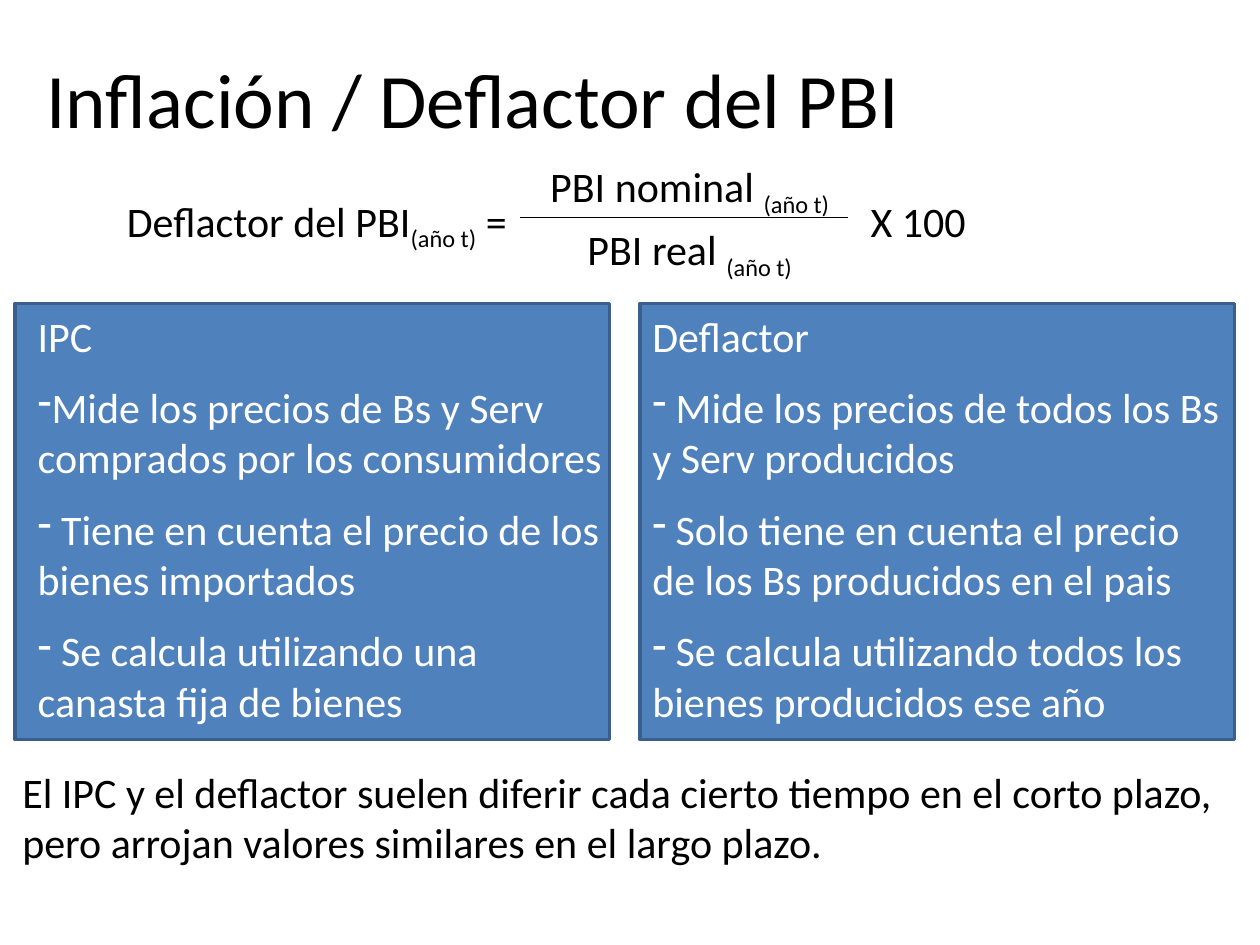
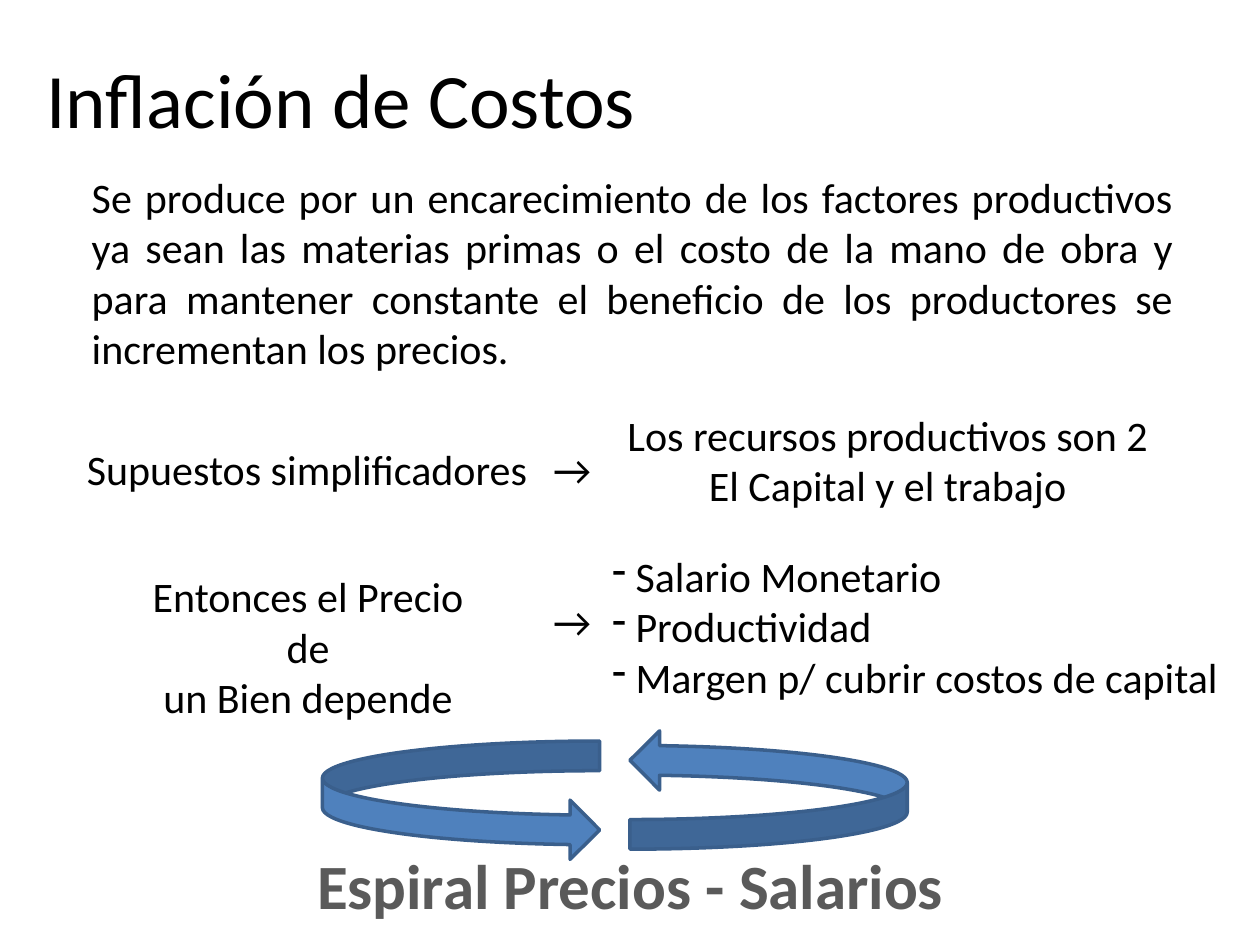
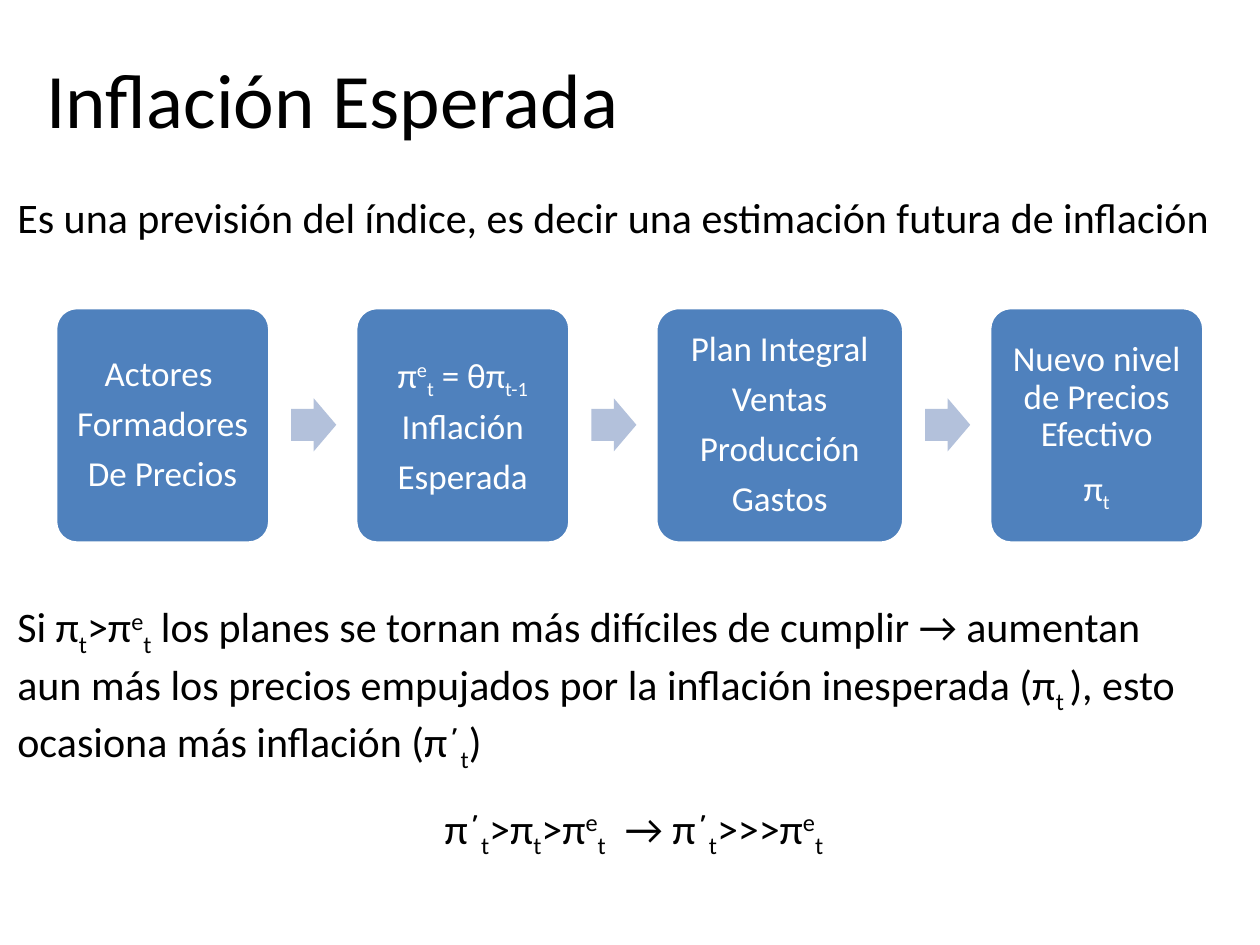
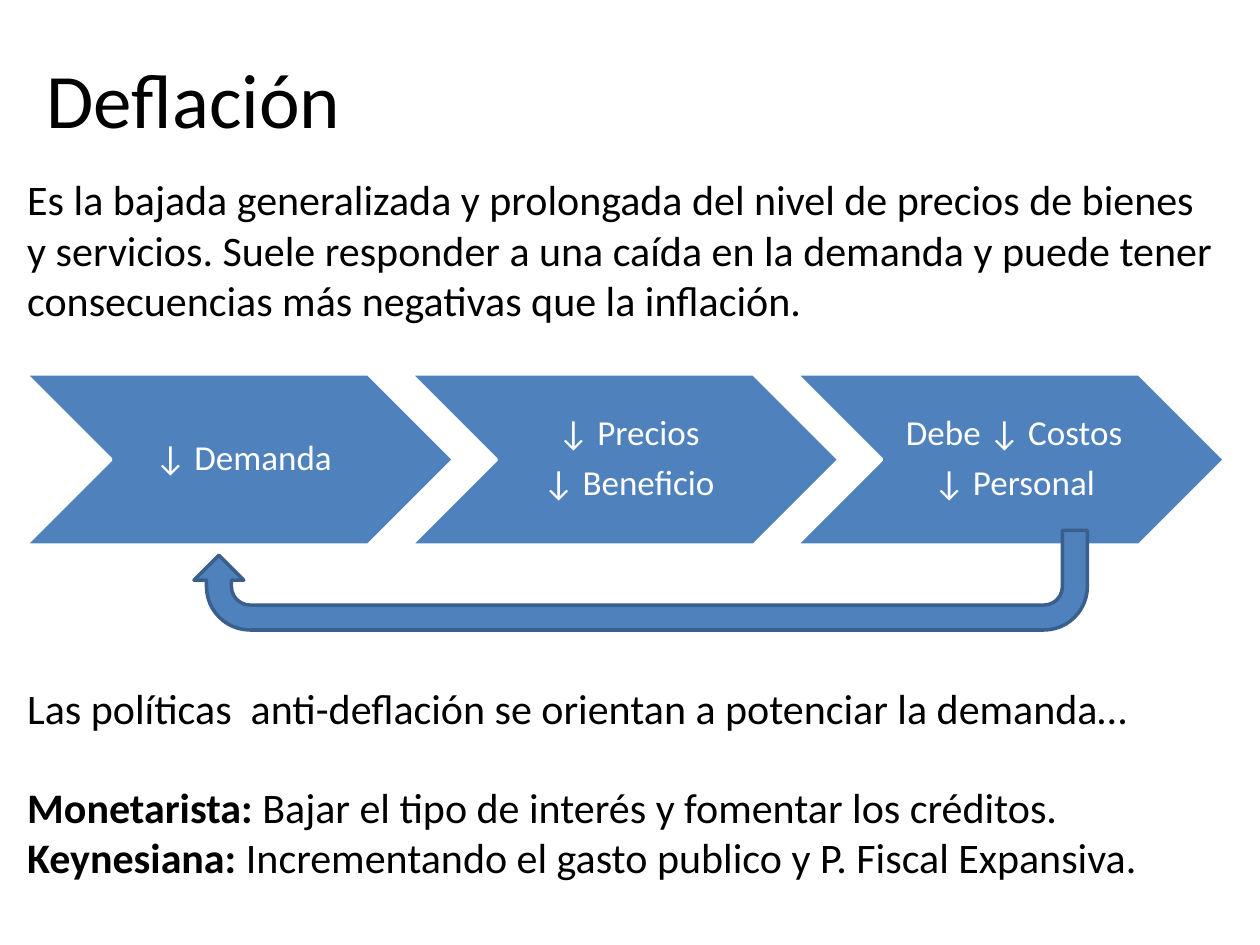
"""Builds four slides on inflation, the GDP deflator and deflation."""
from dataclasses import dataclass

from lxml import etree
from pptx import Presentation
from pptx.dml.color import RGBColor
from pptx.enum.shapes import MSO_CONNECTOR, MSO_SHAPE
from pptx.enum.text import MSO_ANCHOR, PP_ALIGN
from pptx.oxml.ns import qn
from pptx.util import Cm, Pt

LEFT, CENTER, JUSTIFY = PP_ALIGN.LEFT, PP_ALIGN.CENTER, PP_ALIGN.JUSTIFY
TOP, MIDDLE = MSO_ANCHOR.TOP, MSO_ANCHOR.MIDDLE
RECTANGLE, ROUNDED = MSO_SHAPE.RECTANGLE, MSO_SHAPE.ROUNDED_RECTANGLE
CHEVRON, RIGHT_ARROW = MSO_SHAPE.CHEVRON, MSO_SHAPE.RIGHT_ARROW
CURVED_RIGHT, CURVED_LEFT = MSO_SHAPE.CURVED_RIGHT_ARROW, MSO_SHAPE.CURVED_LEFT_ARROW
U_TURN = MSO_SHAPE.U_TURN_ARROW
STRAIGHT = MSO_CONNECTOR.STRAIGHT
BASELINES = {"_": "-25000", "^": "30000"}


@dataclass(frozen=True)
class Theme:
    """Colours, font and type sizes of the deck."""
    font: str = "Calibri"
    ink: RGBColor = RGBColor(0x00, 0x00, 0x00)
    paper: RGBColor = RGBColor(0xFF, 0xFF, 0xFF)
    blue: RGBColor = RGBColor(0x4F, 0x81, 0xBD)
    edge: RGBColor = RGBColor(0x3A, 0x5F, 0x8C)
    pale: RGBColor = RGBColor(0xB3, 0xC1, 0xDB)
    grey: RGBColor = RGBColor(0x5A, 0x5A, 0x5A)
    title: int = 44
    banner: int = 36
    body: int = 24
    step: int = 20


class Deck:
    """Holds the style and the current slide."""

    def __init__(self, theme):
        self.theme = theme
        self.presentation = Presentation()
        self.presentation.slide_width = Cm(25.4)
        self.presentation.slide_height = Cm(19.05)

    def new_slide(self, title):
        """Start a blank slide with its title."""
        blank = self.presentation.slide_layouts[6]
        self.slide = self.presentation.slides.add_slide(blank)
        self.text(0.69, 0.91, 24.21, 2.13, [title], size=self.theme.title)

    def set_lines(self, frame, lines, size, color, align=LEFT, bold=False,
                  before=0, after=0, spacing=1.0):
        """Fill a frame; '|' parts runs, led by _ (sub), ^ (super) or * (bold); '-' leads a bullet."""
        frame.word_wrap = True
        for index, line in enumerate(lines):
            paragraph = frame.paragraphs[0] if index == 0 else frame.add_paragraph()
            paragraph.alignment = align
            paragraph.line_spacing = spacing
            paragraph.space_before = Pt(before if index else 0)
            paragraph.space_after = Pt(after)
            if line.startswith("-"):
                self.dash(paragraph)
                line = line[1:]
            font = paragraph.font
            font.name, font.size, font.bold = self.theme.font, Pt(size), bold
            font.color.rgb = color
            for part in line.split("|"):
                run = paragraph.add_run()
                run.text = part.lstrip("_^*")
                if part[0] in BASELINES:
                    run.font._element.set("baseline", BASELINES[part[0]])
                elif part[0] == "*":
                    run.font.bold = True

    def dash(self, paragraph):
        """Give a paragraph a dash bullet without indent."""
        properties = paragraph._p.get_or_add_pPr()
        properties.set("marL", "0")
        properties.set("indent", "0")
        etree.SubElement(properties, qn("a:buFontTx"))
        etree.SubElement(properties, qn("a:buChar")).set("char", "-")

    def text(self, left, top, width, height, lines, size=None, color=None, **style):
        """Add a text box."""
        box = self.slide.shapes.add_textbox(Cm(left), Cm(top), Cm(width), Cm(height))
        self.set_lines(box.text_frame, lines, size or self.theme.body,
                       color or self.theme.ink, **style)

    def shape(self, kind, left, top, width, height, fill=None, edge=None):
        """Add a filled preset shape."""
        shape = self.slide.shapes.add_shape(kind, Cm(left), Cm(top), Cm(width), Cm(height))
        shape.shadow.inherit = False
        shape.fill.solid()
        shape.fill.fore_color.rgb = fill or self.theme.blue
        shape.line.color.rgb = edge or self.theme.edge
        shape.line.width = Pt(2)
        return shape

    def inset(self, shape, left, top, right, bottom, anchor):
        """Set the margins and anchor of a shape's text."""
        frame = shape.text_frame
        frame.margin_left, frame.margin_top = Cm(left), Cm(top)
        frame.margin_right, frame.margin_bottom = Cm(right), Cm(bottom)
        frame.vertical_anchor = anchor
        return frame

    def panel(self, left, lines, margins):
        """Add a comparison panel."""
        panel = self.shape(RECTANGLE, left, 6.12, 11.99, 8.79)
        frame = self.inset(panel, margins[0], 0.13, margins[1], 0.13, TOP)
        self.set_lines(frame, lines, self.theme.body, self.theme.paper, before=12)

    def step(self, kind, left, top, width, height, lines, margins):
        """Add one step of a process."""
        step = self.shape(kind, left, top, width, height, edge=self.theme.paper)
        if kind == ROUNDED:
            step.adjustments[0] = 0.1
        frame = self.inset(step, *margins, MIDDLE)
        self.set_lines(frame, lines, self.theme.step, self.theme.paper,
                       align=CENTER, after=7, spacing=0.9)

    def step_arrow(self, left, top):
        """Add a small arrow between two steps."""
        arrow = self.shape(RIGHT_ARROW, left, top, 0.91, 1.07, fill=self.theme.pale)
        arrow.adjustments[0] = 0.6
        arrow.line.fill.background()

    def rule(self, left, right, y):
        """Add a thin horizontal line."""
        rule = self.slide.shapes.add_connector(STRAIGHT, Cm(left), Cm(y), Cm(right), Cm(y))
        rule.line.color.rgb = self.theme.ink
        rule.line.width = Pt(0.75)
        etree.SubElement(rule._element.spPr, qn("a:effectLst"))


def deflator_slide(deck):
    """Formula of the deflator and its comparison with the IPC."""
    deck.new_slide("Inflación / Deflactor del PBI")
    deck.text(2.31, 3.81, 8.41, 1.27, ["Deflactor del PBI|_(año t)| ="])
    for top, term in ((3.12, "PBI nominal |_(año t)"), (4.39, "PBI real |_(año t)")):
        deck.text(10.31, top, 7.19, 1.27, [term], align=CENTER)
    deck.rule(10.49, 17.09, 4.39)
    deck.text(17.3, 3.81, 3.4, 1.27, ["X 100"])
    deck.panel(0.3, [
        "IPC",
        "-Mide los precios de Bs y Serv comprados por los consumidores",
        "- Tiene en cuenta el precio de los bienes importados",
        "- Se calcula utilizando una canasta fija de bienes",
    ], (0.46, 0.05))
    deck.panel(12.9, [
        "Deflactor",
        "- Mide los precios de todos los Bs y Serv producidos",
        "- Solo tiene en cuenta el precio de los Bs producidos en el pais",
        "- Se calcula utilizando todos los bienes producidos ese año",
    ], (0.25, 0.25))
    deck.text(0.2, 15.32, 24.89, 2.31, [
        "El IPC y el deflactor suelen diferir cada cierto tiempo en el corto plazo, "
        "pero arrojan valores similares en el largo plazo."])


def costs_slide(deck):
    """Cost inflation and the price-wage spiral."""
    deck.new_slide("Inflación de Costos")
    deck.text(1.6, 3.33, 22.3, 4.37, [
        "Se produce por un encarecimiento de los factores productivos ya sean las "
        "materias primas o el costo de la mano de obra y para mantener constante el "
        "beneficio de los productores se incrementan los precios."], align=JUSTIFY)
    deck.text(1.5, 8.81, 9.5, 1.27, ["Supuestos simplificadores"])
    deck.text(12.09, 8.13, 11.61, 2.31,
              ["Los recursos productivos son 2", "El Capital y el trabajo"], align=CENTER)
    deck.text(2.31, 11.38, 7.8, 2.31,
              ["Entonces el Precio de", "un Bien depende"], align=CENTER)
    for top in (8.81, 11.89):
        deck.text(10.9, top, 1.3, 1.27, ["→"])
    deck.text(12.09, 10.97, 13.31, 3.33, [
        "- Salario Monetario",
        "- Productividad",
        "- Margen p/ cubrir costos de capital",
    ], align=JUSTIFY)
    deck.shape(CURVED_RIGHT, 6.5, 14.94, 5.59, 2.39)
    wages_to_prices = deck.shape(CURVED_LEFT, 12.7, 14.73, 5.59, 2.39)
    wages_to_prices._element.spPr.xfrm.set("flipV", "1")
    deck.text(6.07, 16.94, 13.28, 1.8, ["Espiral Precios - Salarios"],
              size=deck.theme.banner, color=deck.theme.grey, align=CENTER, bold=True)


def expected_slide(deck):
    """Expected inflation as a chain of steps."""
    deck.new_slide("Inflación Esperada")
    deck.text(0.1, 3.73, 24.79, 1.27, [
        "Es una previsión del índice, es decir una estimación futura de inflación"])
    steps = (
        (4.32, ["Actores ", "Formadores", "De Precios"]),
        (4.32, ["π|^e|_t| = θπ|_t-1", "Inflación", "Esperada"]),
        (5.0, ["Plan Integral", "Ventas", "Producción", "Gastos"]),
        (4.32, ["Nuevo nivel de Precios Efectivo", "π|_t"]),
    )
    left, gap = 1.12, 1.73
    for index, (width, lines) in enumerate(steps):
        if index:
            deck.step_arrow(left - gap + 0.43, 8.03)
        deck.step(ROUNDED, left, 6.2, width, 4.75, lines, (0.1, 0.1, 0.1, 0.1))
        left += width + gap
    deck.text(0.1, 11.99, 24.61, 3.33, [
        "Si π|_t|>π|^e|_t| los planes se tornan más difíciles de cumplir → aumentan "
        "aun más los precios empujados por la inflación inesperada (π|_t |), esto "
        "ocasiona más inflación (π´|_t|)"])
    deck.text(0.53, 16.05, 24.61, 1.27,
              ["π´|_t|>π|_t|>π|^e|_t|  → π´|_t|>>>π|^e|_t "], align=CENTER)


def deflation_slide(deck):
    """Deflation, its cycle and the policies against it."""
    deck.new_slide("Deflación")
    deck.text(0.3, 3.38, 24.41, 3.33, [
        "Es la bajada generalizada y prolongada del nivel de precios de bienes y "
        "servicios. Suele responder a una caída en la demanda y puede tener "
        "consecuencias más negativas que la inflación."])
    stages = (["↓ Demanda"], ["↓ Precios", "↓ Beneficio"], ["Debe ↓ Costos", "↓ Personal"])
    for index, lines in enumerate(stages):
        deck.step(CHEVRON, 0.51 + 7.77 * index, 7.54, 8.64, 3.45, lines,
                  (0.23, 0.08, 0.08, 0.08))
    return_arrow = deck.shape(U_TURN, 3.91, 10.69, 18.01, 2.01)
    return_arrow.rotation = 180
    deck.text(0.3, 13.64, 24.41, 1.27, [
        "Las políticas  anti-deflación se orientan a potenciar la demanda…"])
    deck.text(0.3, 15.62, 24.41, 2.31, [
        "*Monetarista: |Bajar el tipo de interés y fomentar los créditos.",
        "*Keynesiana: |Incrementando el gasto publico y P. Fiscal Expansiva.",
    ])


def main():
    """Build and save the deck."""
    deck = Deck(Theme())
    for build in (deflator_slide, costs_slide, expected_slide, deflation_slide):
        build(deck)
    deck.presentation.save("out.pptx")


if __name__ == "__main__":
    main()
